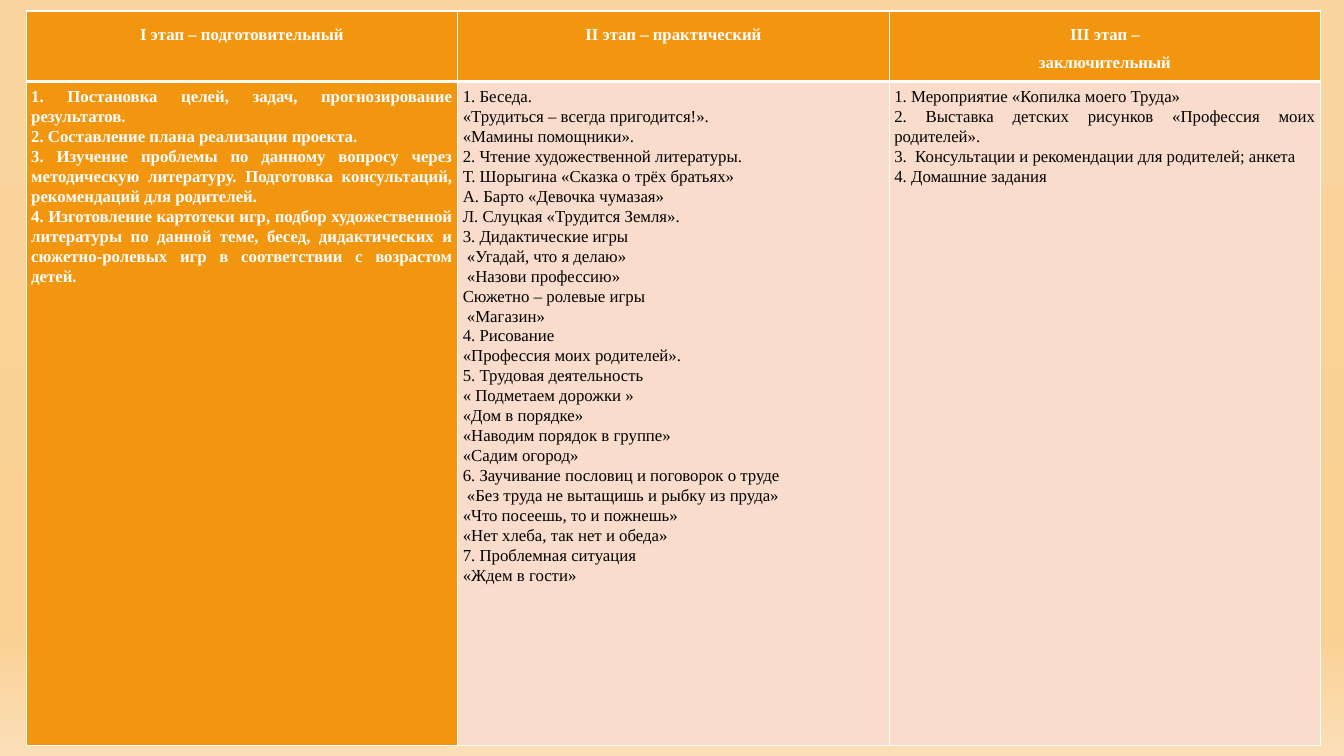
from lxml import etree
from pptx import Presentation
from pptx.dml.color import RGBColor
from pptx.enum.text import PP_ALIGN
from pptx.oxml.ns import qn
from pptx.util import Inches, Pt

CENTER, JUSTIFY = PP_ALIGN.CENTER, PP_ALIGN.JUSTIFY
BLANK_LAYOUT = 6
FONT_NAME, FONT_SIZE = "Times New Roman", 12
SLIDE_WIDTH, SLIDE_HEIGHT = 13.33, 7.5
TABLE_LEFT, TABLE_TOP, TABLE_WIDTH = 0.26, 0.11, 12.84
ROW_HEIGHTS = (0.7, 6.59)
CELL_MARGIN = 0.05
THIN, THICK = 0.96, 3
COLORS = {
    "accent": "F3960F",
    "pale": "FADCCC",
    "light": "FFFFFF",
    "dark": "000000",
}
BACKGROUND_STOPS = ((0, "FAD59F"), (74, "FAD093"), (83, "FAD093"), (100, "FBDFB7"))

STAGES = (
    (
        ("I этап – подготовительный",),
        (
            "1. Постановка целей, задач, прогнозирование результатов.",
            "2. Составление плана реализации проекта.",
            "3. Изучение проблемы по данному вопросу через методическую литературу. "
            "Подготовка консультаций, рекомендаций для родителей.",
            "4. Изготовление картотеки игр, подбор художественной литературы по данной теме, "
            "бесед, дидактических и сюжетно-ролевых игр в соответствии с возрастом детей.",
        ),
    ),
    (
        ("II этап – практический",),
        (
            "1. Беседа.",
            "«Трудиться – всегда пригодится!».",
            "«Мамины помощники».",
            "2. Чтение художественной литературы.",
            "Т. Шорыгина «Сказка о трёх братьях»",
            "А. Барто «Девочка чумазая»",
            "Л. Слуцкая «Трудится Земля».",
            "3. Дидактические игры",
            " «Угадай, что я делаю»",
            " «Назови профессию»",
            "Сюжетно – ролевые игры",
            " «Магазин»",
            "4. Рисование",
            "«Профессия моих родителей».",
            "5. Трудовая деятельность",
            "« Подметаем дорожки »",
            "«Дом в порядке»",
            "«Наводим порядок в группе»",
            "«Садим огород»",
            "6. Заучивание пословиц и поговорок о труде",
            " «Без труда не вытащишь и рыбку из пруда»",
            "«Что посеешь, то и пожнешь»",
            "«Нет хлеба, так нет и обеда»",
            "7. Проблемная ситуация",
            "«Ждем в гости»",
        ),
    ),
    (
        ("III этап –", "заключительный"),
        (
            "1. Мероприятие «Копилка моего Труда»",
            "2. Выставка детских рисунков «Профессия моих родителей».",
            "3.  Консультации и рекомендации для родителей; анкета",
            "4. Домашние задания",
        ),
    ),
)


def paint_background(slide):
    """Fill the slide with a vertical gradient of several stops."""
    fill = slide.background.fill
    fill.gradient()
    fill.gradient_angle = 270
    stop_list = slide.element.find(".//" + qn("a:gsLst"))
    for stop in list(stop_list):
        stop_list.remove(stop)
    for position, color in BACKGROUND_STOPS:
        stop = etree.SubElement(stop_list, qn("a:gs"), pos=str(position * 1000))
        etree.SubElement(stop, qn("a:srgbClr"), val=color)


def set_borders(cell, top, bottom):
    """Draw light borders around a cell, with the given top and bottom widths."""
    properties = cell._tc.get_or_add_tcPr()
    sides = (("a:lnL", THIN), ("a:lnR", THIN), ("a:lnT", top), ("a:lnB", bottom))
    for index, (tag, width) in enumerate(sides):
        line = etree.Element(qn(tag), w=str(Pt(width)))
        fill = etree.SubElement(line, qn("a:solidFill"))
        etree.SubElement(fill, qn("a:srgbClr"), val=COLORS["light"])
        properties.insert(index, line)


def write_cell(cell, lines, alignment, spacing, emphasized):
    """Fill a cell and write one paragraph for each line."""
    cell.fill.solid()
    cell.fill.fore_color.rgb = RGBColor.from_string(COLORS["accent" if emphasized else "pale"])
    cell.margin_left = cell.margin_right = Inches(CELL_MARGIN)
    cell.margin_top = cell.margin_bottom = Inches(CELL_MARGIN)
    frame = cell.text_frame
    for index, line in enumerate(lines):
        paragraph = frame.add_paragraph() if index else frame.paragraphs[0]
        paragraph.alignment = alignment
        paragraph.line_spacing = spacing
        run = paragraph.add_run()
        run.text = line
        run.font.name = FONT_NAME
        run.font.size = Pt(FONT_SIZE)
        run.font.bold = emphasized
        run.font.color.rgb = RGBColor.from_string(COLORS["light" if emphasized else "dark"])


def add_stage_table(slide):
    """Add the table with one column for each project stage."""
    table = slide.shapes.add_table(
        len(ROW_HEIGHTS), len(STAGES), Inches(TABLE_LEFT), Inches(TABLE_TOP),
        Inches(TABLE_WIDTH), Inches(sum(ROW_HEIGHTS)),
    ).table
    for row, height in zip(table.rows, ROW_HEIGHTS):
        row.height = Inches(height)
    for column, (heading, activities) in enumerate(STAGES):
        table.columns[column].width = Inches(TABLE_WIDTH / len(STAGES))
        header, body = table.cell(0, column), table.cell(1, column)
        write_cell(header, heading, CENTER, 1.5, True)
        write_cell(body, activities, JUSTIFY, 1.07, column == 0)
        set_borders(header, THIN, THICK)
        set_borders(body, THICK, THIN)


def main():
    """Build the slide of project stages and save it."""
    presentation = Presentation()
    presentation.slide_width = Inches(SLIDE_WIDTH)
    presentation.slide_height = Inches(SLIDE_HEIGHT)
    slide = presentation.slides.add_slide(presentation.slide_layouts[BLANK_LAYOUT])
    paint_background(slide)
    add_stage_table(slide)
    presentation.save("out.pptx")


if __name__ == "__main__":
    main()
